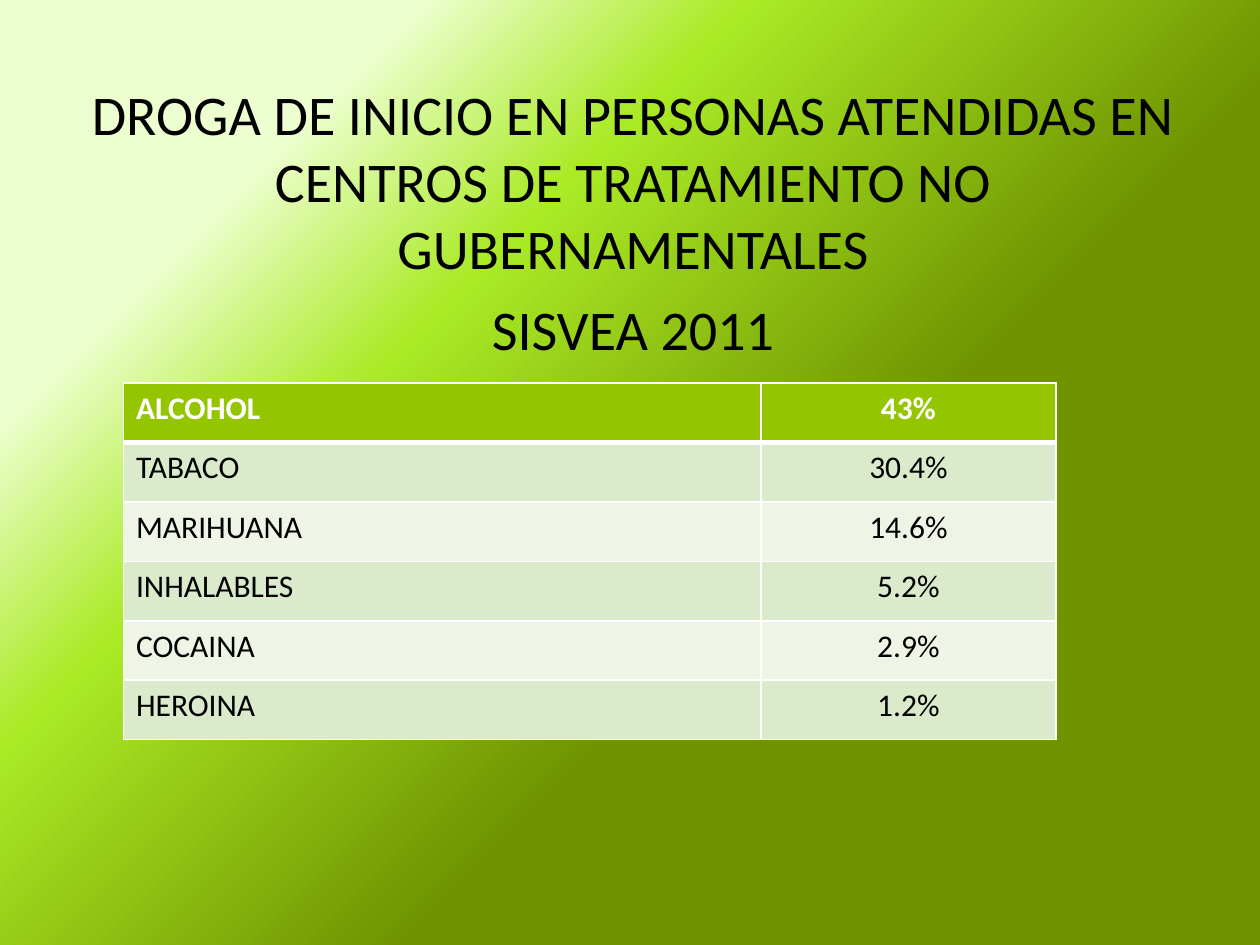
from dataclasses import dataclass
from lxml.etree import SubElement
from pptx import Presentation
from pptx.dml.color import RGBColor
from pptx.enum.text import MSO_ANCHOR, PP_ALIGN
from pptx.oxml.ns import qn
from pptx.util import Inches, Pt


@dataclass(frozen=True)
class Theme:
    """Colours, font and type sizes of the slide."""
    font: str = "Calibri"
    title: int = 32
    body: int = 18
    ink: str = "000000"
    white: str = "FFFFFF"
    head: str = "94C600"
    bands: tuple = ("EEF5E7", "DCEACC")
    stops: tuple = ((19, "EDFFD1"), (34, "AAEA25"), (61, "6F9400"))


THEME = Theme()
TITLE = (
    "DROGA DE INICIO EN PERSONAS ATENDIDAS EN CENTROS DE TRATAMIENTO NO GUBERNAMENTALES",
    "SISVEA 2011",
)
DRUGS = (
    ("ALCOHOL", "43%"),
    ("TABACO", "30.4%"),
    ("MARIHUANA", "14.6%"),
    ("INHALABLES", "5.2%"),
    ("COCAINA", "2.9%"),
    ("HEROINA", "1.2%"),
)


def style(item, values):
    """Set each attribute of an item from a dict."""
    for name, value in values.items():
        setattr(item, name, value)


def write(para, text, size, color, align, bold=False):
    """Write one styled run into a paragraph."""
    para.alignment = align
    run = para.add_run()
    run.text = text
    style(run.font, {"name": THEME.font, "size": Pt(size), "bold": bold})
    run.font.color.rgb = RGBColor.from_string(color)


def paint(slide):
    """Fill the background with the diagonal gradient."""
    fill = slide.background.fill
    fill.gradient()
    fill.gradient_angle = 315
    stops = slide.element.find(".//" + qn("a:gsLst"))
    for old in list(stops):
        stops.remove(old)
    for pos, color in THEME.stops:
        stop = SubElement(stops, qn("a:gs"), pos=str(pos * 1000))
        SubElement(stop, qn("a:srgbClr"), val=color)


def add_title(slide, box):
    """Place the centred title paragraphs in the box."""
    frame = slide.shapes.add_textbox(*map(Inches, box)).text_frame
    style(frame, {"word_wrap": True, "vertical_anchor": MSO_ANCHOR.TOP})
    for i, text in enumerate(TITLE):
        para = frame.add_paragraph() if i else frame.paragraphs[0]
        para.space_before = Pt(7.5 if i else 0)
        write(para, text, THEME.title, THEME.ink, PP_ALIGN.CENTER)


def edge(cell, side, width):
    """Draw one white border of a cell."""
    line = SubElement(cell._tc.get_or_add_tcPr(), qn("a:ln" + side), w=str(Pt(width)))
    fill = SubElement(line, qn("a:solidFill"))
    SubElement(fill, qn("a:srgbClr"), val=THEME.white)


def add_drugs(slide, box, split):
    """Place the table of drugs in the box, split into two columns."""
    size = len(DRUGS)
    table = slide.shapes.add_table(size, 2, *map(Inches, box)).table
    for col, width in zip(table.columns, (split, box[2] - split)):
        col.width = Inches(width)
    for r, row in enumerate(DRUGS):
        table.rows[r].height = Inches(box[3] / size)
        top = r == 0
        color = THEME.white if top else THEME.ink
        for c, text in enumerate(row):
            cell = table.cell(r, c)
            for side in "LRTB":
                thick = (r, side) in ((0, "B"), (1, "T"))
                edge(cell, side, 3 if thick else 1)
            cell.fill.solid()
            shade = THEME.head if top else THEME.bands[r % 2]
            cell.fill.fore_color.rgb = RGBColor.from_string(shade)
            align = PP_ALIGN.CENTER if c else PP_ALIGN.LEFT
            write(cell.text_frame.paragraphs[0], text, THEME.body, color, align, top)


def main():
    """Build and save the slide."""
    deck = Presentation()
    style(deck, {"slide_width": Inches(10), "slide_height": Inches(7.5)})
    slide = deck.slides.add_slide(deck.slide_layouts[6])
    paint(slide)
    add_title(slide, (0.55, 0.58, 8.95, 4.58))
    add_drugs(slide, (0.98, 3.04, 7.4, 2.83), 5.06)
    deck.save("out.pptx")


if __name__ == "__main__":
    main()
